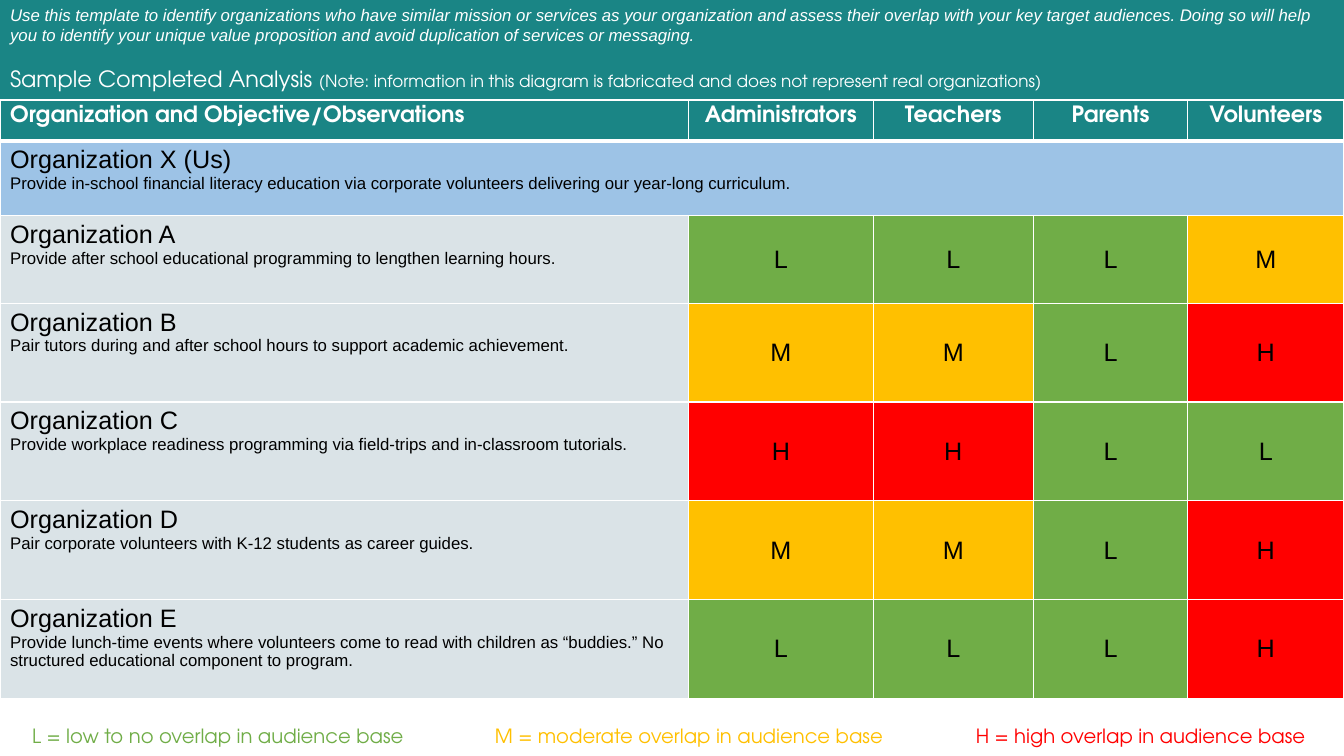
from lxml.etree import SubElement
from pptx import Presentation
from pptx.dml.color import RGBColor
from pptx.enum.text import MSO_ANCHOR as Anchor, MSO_AUTO_SIZE as AutoSize, PP_ALIGN as Align
from pptx.oxml.ns import qn
from pptx.util import Inches, Pt

SLIDE_WIDTH, SLIDE_HEIGHT = Inches(13.33), Inches(7.5)
BODY_FONT, DISPLAY_FONT = "Arial", "TeX Gyre Adventor"
COLOURS = {
    "teal": "1A8585", "blue": "9DC3E6", "grey": "DAE3E7",
    "white": "FFFFFF", "black": "000000",
    "L": "70AD47", "M": "FFC000", "H": "FF0000",
}

# Percentages of the slide's width and height
COLUMN_SHARES = (51.24, 13.73, 11.93, 11.48, 11.62)
ROW_SHARES = (5.33, 9.87, 11.6) + (13.07,) * 3 + (13.07,)
TABLE_TOP = 13.33

INSTRUCTIONS = (
    "Use this template to identify organizations who have similar mission or services as your "
    "organization and assess their overlap with your key target audiences. Doing so will help you "
    "to identify your unique value proposition and avoid duplication of services or messaging."
)
HEADINGS = ("Organization and Objective/Observations",
            "Administrators", "Teachers", "Parents", "Volunteers")
US = ("Organization X (Us)",
      "Provide in-school financial literacy education via corporate volunteers delivering our "
      "year-long curriculum.")
ORGANIZATIONS = (
    ("Organization A",
     "Provide after school educational programming to lengthen learning hours.", "LLLM"),
    ("Organization B",
     "Pair tutors during and after school hours to support academic achievement.", "MMLH"),
    ("Organization C",
     "Provide workplace readiness programming via field-trips and in-classroom tutorials.", "HHLL"),
    ("Organization D",
     "Pair corporate volunteers with K-12 students as career guides.", "MMLH"),
    ("Organization E",
     "Provide lunch-time events where volunteers come to read with children as “buddies.” "
     "No structured educational component to program.", "LLLH"),
)
LEGEND = (  # rating, meaning, left share, width share
    ("L", "low to no overlap in audience base", 1.65, 30.16),
    ("M", "moderate overlap in audience base", 36.08, 31.66),
    ("H", "high overlap in audience base", 71.87, 28.13),
)


def across(share):
    return round(SLIDE_WIDTH * share / 100)


def down(share):
    return round(SLIDE_HEIGHT * share / 100)


def colour(name):
    return RGBColor.from_string(COLOURS[name])


def format_run(run, size, colour_name, font_name=BODY_FONT, bold=False, italic=False):
    font = run.font
    font.size, font.name, font.bold, font.italic = Pt(size), font_name, bold, italic
    font.color.rgb = colour(colour_name)


def paint(filled, colour_name):
    filled.fill.solid()
    filled.fill.fore_color.rgb = colour(colour_name)


def set_borders(cell, bottom_width=1):
    properties = cell._tc.get_or_add_tcPr()
    for side, width in (("L", 1), ("R", 1), ("T", 1), ("B", bottom_width)):
        line = SubElement(properties, qn(f"a:ln{side}"), w=str(Pt(width)))
        fill = SubElement(line, qn("a:solidFill"))
        SubElement(fill, qn("a:srgbClr"), val=COLOURS["white"])


def fill_heading(cell, heading, alignment):
    set_borders(cell, bottom_width=3)
    paint(cell, "teal")
    cell.text_frame.text = heading
    paragraph = cell.text_frame.paragraphs[0]
    paragraph.alignment = alignment
    format_run(paragraph.runs[0], 16, "white", DISPLAY_FONT, bold=True)


def fill_organization(cell, name, objective, fill_name):
    paint(cell, fill_name)
    cell.text_frame.text = f"{name}\n{objective}"
    for paragraph, size in zip(cell.text_frame.paragraphs, (18, 12)):
        format_run(paragraph.runs[0], size, "black")


def fill_rating(cell, rating):
    paint(cell, rating)
    cell.vertical_anchor = Anchor.MIDDLE
    cell.text_frame.text = rating
    paragraph = cell.text_frame.paragraphs[0]
    paragraph.alignment = Align.CENTER
    format_run(paragraph.runs[0], 18, "black")


def add_overlap_table(slide):
    table = slide.shapes.add_table(
        len(ROW_SHARES), len(COLUMN_SHARES), 0, down(TABLE_TOP),
        SLIDE_WIDTH, down(sum(ROW_SHARES))).table
    for column, share in zip(table.columns, COLUMN_SHARES):
        column.width = across(share)
    for row, share in zip(table.rows, ROW_SHARES):
        row.height = down(share)

    for index, heading in enumerate(HEADINGS):
        fill_heading(table.cell(0, index), heading, Align.CENTER if index else Align.LEFT)
    for row in list(table.rows)[1:]:
        for cell in row.cells:
            set_borders(cell)

    table.cell(1, 0).merge(table.cell(1, len(HEADINGS) - 1))
    fill_organization(table.cell(1, 0), *US, "blue")
    for row, (name, objective, ratings) in enumerate(ORGANIZATIONS, start=2):
        fill_organization(table.cell(row, 0), name, objective, "grey")
        for column, rating in enumerate(ratings, start=1):
            fill_rating(table.cell(row, column), rating)


def fill_banner(title):
    title.left, title.top, title.width, title.height = 0, 0, SLIDE_WIDTH, down(13.07)
    paint(title, "teal")
    frame = title.text_frame
    frame.word_wrap, frame.auto_size = True, AutoSize.NONE
    frame.vertical_anchor = Anchor.TOP
    frame.text = INSTRUCTIONS
    instructions = frame.paragraphs[0]
    format_run(instructions.runs[0], 12, "white", italic=True)

    heading = frame.add_paragraph()
    heading.space_before = Pt(14)
    for text, size in (
            ("Sample Completed Analysis ", 16),
            ("(Note: information in this diagram is fabricated and does not represent "
             "real organizations)", 12)):
        run = heading.add_run()
        run.text = text
        format_run(run, size, "white", DISPLAY_FONT)
    for paragraph in frame.paragraphs:
        paragraph.alignment = Align.LEFT


def add_legend_entry(slide, rating, meaning, left, width):
    box = slide.shapes.add_textbox(across(left), down(95.07), across(width), down(4.53))
    frame = box.text_frame
    frame.word_wrap = True
    frame.text = f"{rating} = {meaning}"
    format_run(frame.paragraphs[0].runs[0], 14, rating, DISPLAY_FONT)


def main():
    presentation = Presentation()
    presentation.slide_width, presentation.slide_height = SLIDE_WIDTH, SLIDE_HEIGHT
    title_only = presentation.slide_layouts[5]
    slide = presentation.slides.add_slide(title_only)
    fill_banner(slide.shapes.title)
    add_overlap_table(slide)
    for entry in LEGEND:
        add_legend_entry(slide, *entry)
    presentation.save("out.pptx")


if __name__ == "__main__":
    main()
